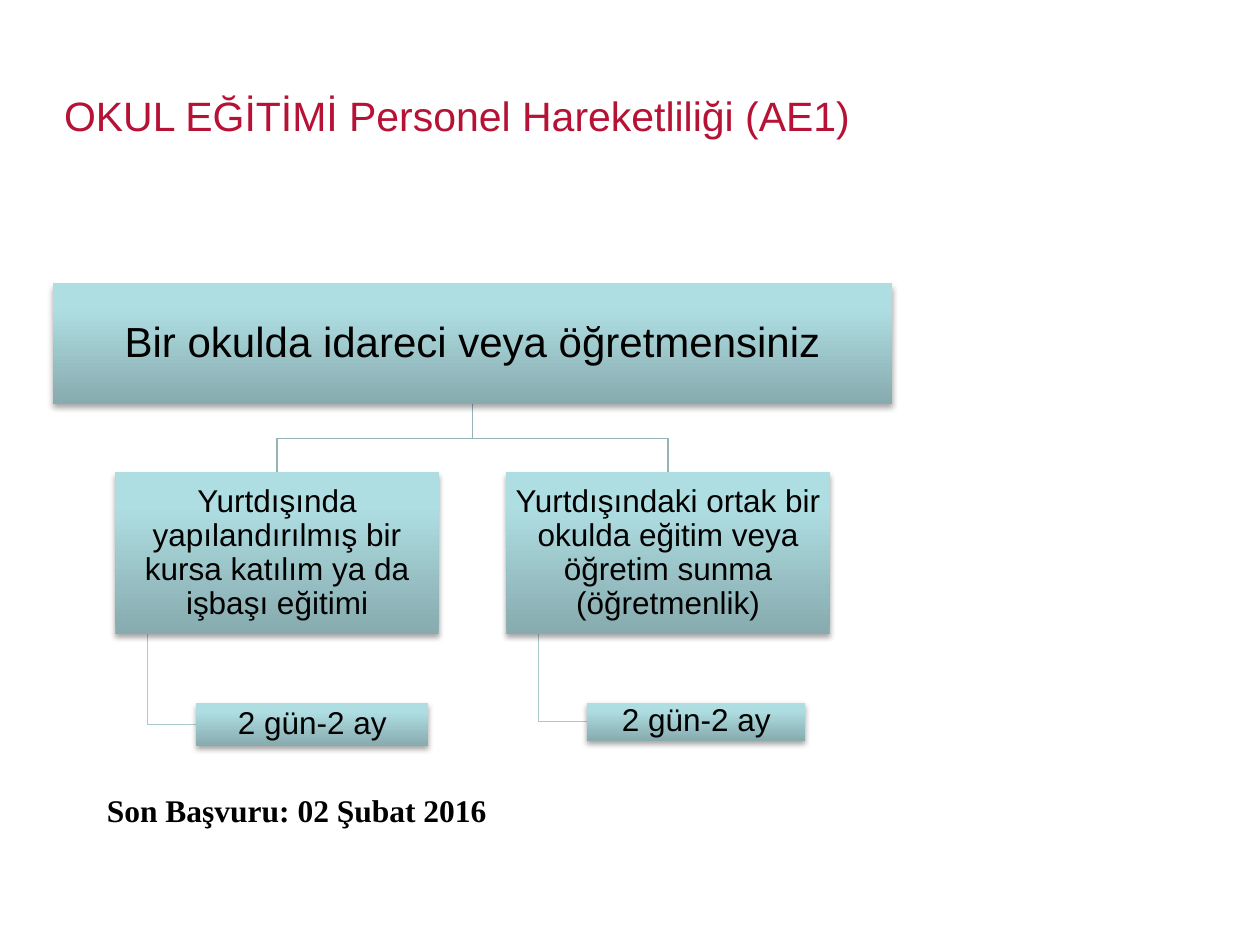
from lxml import etree
from pptx import Presentation
from pptx.dml.color import RGBColor
from pptx.enum import shapes, text
from pptx.oxml import parse_xml
from pptx.oxml.ns import nsdecls, qn
from pptx.util import Pt

GRADIENT = [(0, "87ABAE"), (80, "AFDEE2"), (100, "AFE0E4")]
CENTER = 270
ROOT_TOP, ROOT_WIDTH, ROOT_HEIGHT = 162, 479.6, 69
BRANCH_TOP, BRANCH_WIDTH, BRANCH_HEIGHT = 270, 184.8, 92.4
BRANCH_OFFSET = 111.7
LEAF_TOP = 401.5
BRANCHES = [
    (-1, "Yurtdışında yapılandırılmış bir kursa katılım ya da işbaşı eğitimi", 132.7, 24.8),
    (1, "Yurtdışındaki ortak bir okulda eğitim veya öğretim sunma (öğretmenlik)", 124.7, 21.8),
]


def color(hex_value):
    return RGBColor.from_string(hex_value)


def write(frame, wording, size, hex_value, font_name="Arial", bold=False):
    frame.word_wrap = True
    paragraph = frame.paragraphs[0]
    paragraph.text = wording
    paragraph.font.name = font_name
    paragraph.font.size = Pt(size)
    paragraph.font.bold = bold
    paragraph.font.color.rgb = color(hex_value)
    return paragraph


def add_label(slide, left, top, width, height, *wording_and_style):
    label = slide.shapes.add_textbox(Pt(left), Pt(top), Pt(width), Pt(height))
    write(label.text_frame, *wording_and_style)


def shade(box):
    box.fill.gradient()
    box.fill.gradient_angle = 90
    stops = box._element.spPr.find(qn("a:gradFill")).find(qn("a:gsLst"))
    for stop in list(stops):
        stops.remove(stop)
    for position, hex_value in GRADIENT:
        stop = etree.SubElement(stops, qn("a:gs"), pos=str(position * 1000))
        etree.SubElement(stop, qn("a:srgbClr"), val=hex_value)


def cast_shadow(box):
    box.shadow.inherit = False
    box._element.spPr.find(qn("a:effectLst")).append(parse_xml(
        f'<a:outerShdw {nsdecls("a")} blurRad="{Pt(3.15)}" dist="{Pt(1.8)}" '
        'dir="5400000" rotWithShape="0"><a:srgbClr val="000000">'
        '<a:alpha val="35000"/></a:srgbClr></a:outerShdw>'))


def add_box(slide, left, top, width, height, wording, size, inset=0.9):
    box = slide.shapes.add_shape(
        shapes.MSO_SHAPE.RECTANGLE, Pt(left), Pt(top), Pt(width), Pt(height))
    shade(box)
    box.line.fill.background()
    cast_shadow(box)
    frame = box.text_frame
    frame.margin_left = frame.margin_right = Pt(inset)
    frame.margin_top = frame.margin_bottom = Pt(inset)
    frame.vertical_anchor = text.MSO_ANCHOR.MIDDLE
    paragraph = write(frame, wording, size, "000000")
    paragraph.alignment = text.PP_ALIGN.CENTER
    paragraph.line_spacing = 0.9


def add_branch_line(slide, points, hex_value):
    start, *bends = [(Pt(x), Pt(y)) for x, y in points]
    builder = slide.shapes.build_freeform(*start)
    builder.add_line_segments(bends, close=False)
    branch_line = builder.convert_to_shape()
    branch_line.fill.background()
    branch_line.line.color.rgb = color(hex_value)
    branch_line.line.width = Pt(0.75)
    branch_line.shadow.inherit = False


def add_branch(slide, side, wording, leaf_width, leaf_height):
    middle = CENTER + side * BRANCH_OFFSET
    left = middle - BRANCH_WIDTH / 2
    root_bottom = ROOT_TOP + ROOT_HEIGHT
    bend = (root_bottom + BRANCH_TOP) / 2
    stem = left + BRANCH_WIDTH / 10
    leaf_left = left + BRANCH_WIDTH / 4
    leaf_middle = LEAF_TOP + leaf_height / 2

    add_branch_line(slide, [(CENTER, root_bottom), (CENTER, bend),
                            (middle, bend), (middle, BRANCH_TOP)], "96B3B6")
    add_branch_line(slide, [(stem, BRANCH_TOP + BRANCH_HEIGHT), (stem, leaf_middle),
                            (leaf_left, leaf_middle)], "AACBCE")
    add_box(slide, left, BRANCH_TOP, BRANCH_WIDTH, BRANCH_HEIGHT, wording, 18)
    add_box(slide, leaf_left, LEAF_TOP, leaf_width, leaf_height, "2 gün-2 ay", 18)


def main():
    deck = Presentation()
    deck.slide_width, deck.slide_height = Pt(720), Pt(540)
    slide = deck.slides.add_slide(deck.slide_layouts[6])

    add_label(slide, 29.5, 48.2, 661, 48.2,
              "OKUL EĞİTİMİ Personel Hareketliliği (AE1)", 23.4, "B61235")
    for branch in BRANCHES:
        add_branch(slide, *branch)
    add_box(slide, CENTER - ROOT_WIDTH / 2, ROOT_TOP, ROOT_WIDTH, ROOT_HEIGHT,
            "Bir okulda idareci veya öğretmensiniz", 24, 1.2)
    add_label(slide, 54, 448.6, 252, 29,
              "Son Başvuru: 02 Şubat 2016", 18, "000000", "Times New Roman", True)

    deck.save("out.pptx")


if __name__ == "__main__":
    main()
